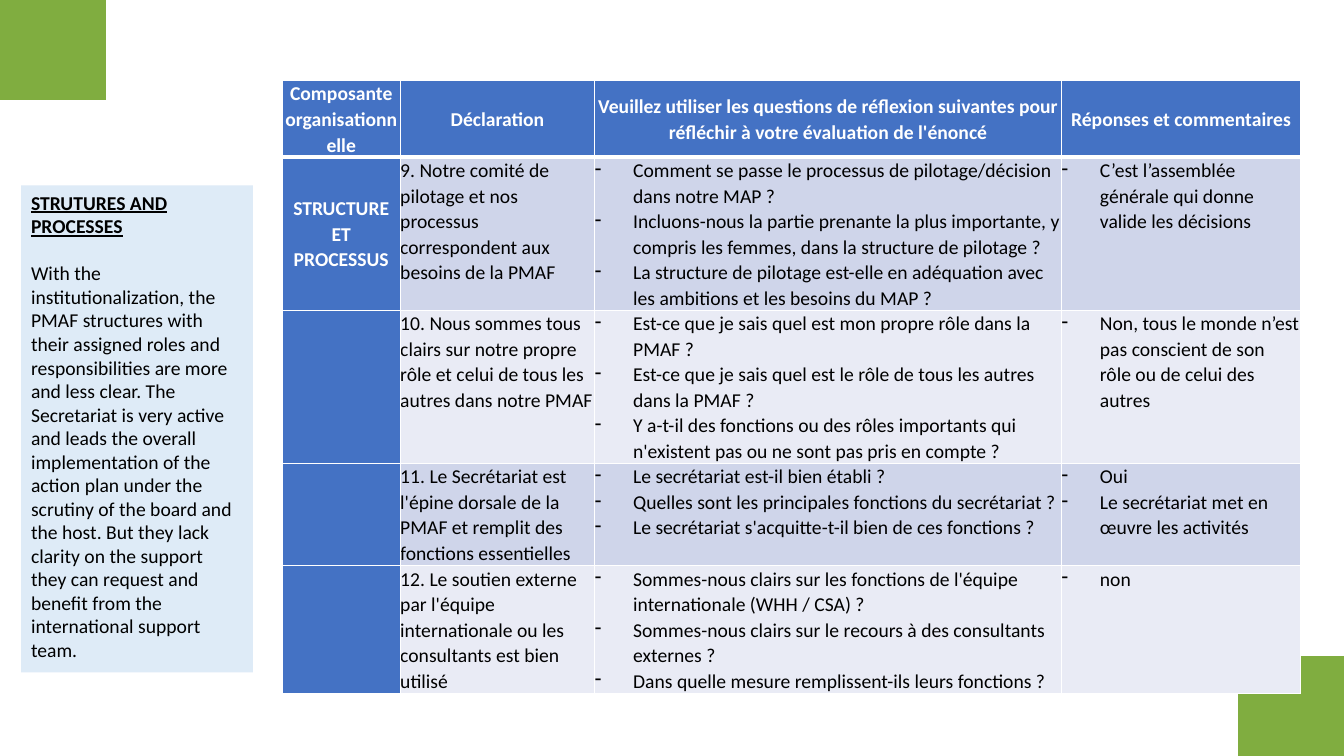
import pptx
import pptx.util
import pptx.dml.color
import pptx.enum.shapes
import pptx.enum.text
import pptx.oxml
import pptx.oxml.ns
from pptx.util import Inches

COLORS = {
    "green": "80AD40", "blue": "4472C4", "odd": "CFD5EA", "even": "E9EBF5",
    "pale": "DEEBF7", "white": "FFFFFF", "black": "000000",
}
FONT = {"name": "Calibri", "size": pptx.util.Pt(14)}
ANCHOR = pptx.enum.text.MSO_ANCHOR
ALIGN = pptx.enum.text.PP_ALIGN

HEADERS = [
    "Composante organisationnelle",
    "Déclaration",
    "Veuillez utiliser les questions de réflexion suivantes pour réfléchir à votre évaluation de l'énoncé",
    "Réponses et commentaires",
]
ROWS = [
    ("STRUCTURE ET PROCESSUS",
     "9. Notre comité de pilotage et nos processus correspondent aux besoins de la PMAF",
     ["Comment se passe le processus de pilotage/décision dans notre MAP ?",
      "Incluons-nous la partie prenante la plus importante, y compris les femmes, dans la structure de pilotage ?",
      "La structure de pilotage est-elle en adéquation avec les ambitions et les besoins du MAP ?"],
     ["C’est l’assemblée générale qui donne valide les décisions"]),
    ("",
     "10. Nous sommes tous clairs sur notre propre rôle et celui de tous les autres dans notre PMAF",
     ["Est-ce que je sais quel est mon propre rôle dans la PMAF ?",
      "Est-ce que je sais quel est le rôle de tous les autres dans la PMAF ?",
      "Y a-t-il des fonctions ou des rôles importants qui n'existent pas ou ne sont pas pris en compte ?"],
     ["Non, tous le monde n’est pas conscient de son rôle ou de celui des autres"]),
    ("",
     "11. Le Secrétariat est l'épine dorsale de la PMAF et remplit des fonctions essentielles",
     ["Le secrétariat est-il bien établi ?",
      "Quelles sont les principales fonctions du secrétariat ?",
      "Le secrétariat s'acquitte-t-il bien de ces fonctions ?"],
     ["Oui", "Le secrétariat met en œuvre les activités"]),
    ("",
     "12. Le soutien externe par l'équipe internationale ou les consultants est bien utilisé",
     ["Sommes-nous clairs sur les fonctions de l'équipe internationale (WHH / CSA) ?",
      "Sommes-nous clairs sur le recours à des consultants externes ?",
      "Dans quelle mesure remplissent-ils leurs fonctions ?"],
     ["non"]),
]
COLUMN_WIDTHS = [1.17, 1.93, 4.63, 2.37]
ROW_HEIGHTS = [0.76, 1.52, 1.52, 1.01, 1.27]
SIDE_TITLE = "STRUTURES AND PROCESSES"
SIDE_TEXT = (
    "With the institutionalization, the PMAF structures with their assigned roles and "
    "responsibilities are more and less clear. The Secretariat is very active and leads the "
    "overall implementation of the action plan under the scrutiny of the board and the host. "
    "But they lack clarity on the support they can request and benefit from the international "
    "support team."
)


def rgb(color):
    return pptx.dml.color.RGBColor.from_string(COLORS[color])


def apply(target, formats):
    for name, value in formats.items():
        setattr(target, name, value)


def paint(target, color):
    target.fill.solid()
    target.fill.fore_color.rgb = rgb(color)


def add_block(page, left, top, width, height, color):
    block = page.shapes.add_shape(
        pptx.enum.shapes.MSO_SHAPE.RECTANGLE,
        Inches(left), Inches(top), Inches(width), Inches(height))
    block.shadow.inherit = False
    block.line.fill.background()
    paint(block, color)
    return block


def write(para, text, color="black", **formats):
    span = para.add_run()
    span.text = text
    apply(span.font, {**FONT, **formats})
    span.font.color.rgb = rgb(color)


def add_dash(para):
    properties = para._p.get_or_add_pPr()
    properties.set("marL", str(Inches(0.38)))
    properties.set("indent", str(Inches(-0.38)))
    bullet = pptx.oxml.parse_xml(f'<a:buChar {pptx.oxml.ns.nsdecls("a")} char="-"/>')
    properties.append(bullet)


def add_borders(cell, bottom):
    properties = cell._tc.get_or_add_tcPr()
    for side, points in {"L": 1, "R": 1, "T": 1, "B": bottom}.items():
        properties.append(pptx.oxml.parse_xml(
            f'<a:ln{side} {pptx.oxml.ns.nsdecls("a")} w="{pptx.util.Pt(points)}">'
            f'<a:solidFill><a:srgbClr val="{COLORS["white"]}"/></a:solidFill></a:ln{side}>'))


def fill_cell(cell, content, color, heading, bottom=1):
    add_borders(cell, bottom)
    paint(cell, color)
    apply(cell, dict.fromkeys(["margin_left", "margin_right", "margin_top", "margin_bottom"], 0))
    cell.vertical_anchor = ANCHOR.MIDDLE if heading else ANCHOR.TOP
    dashed = isinstance(content, list)
    for index, text in enumerate(content if dashed else [content]):
        para = cell.text_frame.add_paragraph() if index else cell.text_frame.paragraphs[0]
        if dashed:
            add_dash(para)
        apply(para, {"line_spacing": 1.07, "alignment": ALIGN.CENTER if heading else ALIGN.LEFT})
        if text:
            write(para, text, "white" if heading else "black", bold=heading)


def add_assessment_table(page):
    frame = page.shapes.add_table(
        len(ROW_HEIGHTS), len(COLUMN_WIDTHS), Inches(2.8), Inches(0.8),
        Inches(sum(COLUMN_WIDTHS)), Inches(sum(ROW_HEIGHTS)))
    table = frame.table
    for column, width in zip(table.columns, COLUMN_WIDTHS):
        column.width = Inches(width)
    for row, height in zip(table.rows, ROW_HEIGHTS):
        row.height = Inches(height)
    for index, content in enumerate(HEADERS):
        fill_cell(table.cell(0, index), content, "blue", True, bottom=3)
    for number, contents in enumerate(ROWS, 1):
        band = "odd" if number % 2 else "even"
        for index, content in enumerate(contents):
            heading = index == 0
            fill_cell(table.cell(number, index), content, "blue" if heading else band, heading)


def add_side_note(page):
    box = add_block(page, 0.21, 1.84, 2.3, 4.83, "pale").text_frame
    apply(box, {"word_wrap": True, "vertical_anchor": ANCHOR.TOP})
    title = box.paragraphs[0]
    body = box.add_paragraph()
    apply(title, {"alignment": ALIGN.LEFT})
    apply(body, {"alignment": ALIGN.LEFT, "space_before": pptx.util.Pt(17)})
    write(title, SIDE_TITLE, bold=True, underline=True)
    write(body, SIDE_TEXT)


def main():
    deck = pptx.Presentation()
    apply(deck, {"slide_width": Inches(13.33), "slide_height": Inches(7.5)})
    page = deck.slides.add_slide(deck.slide_layouts[6])
    for left, top in [(0, 0), (12.28, 6.51)]:
        add_block(page, left, top, 1.05, 0.99, "green")
    add_assessment_table(page)
    add_side_note(page)
    deck.save("out.pptx")


if __name__ == "__main__":
    main()
